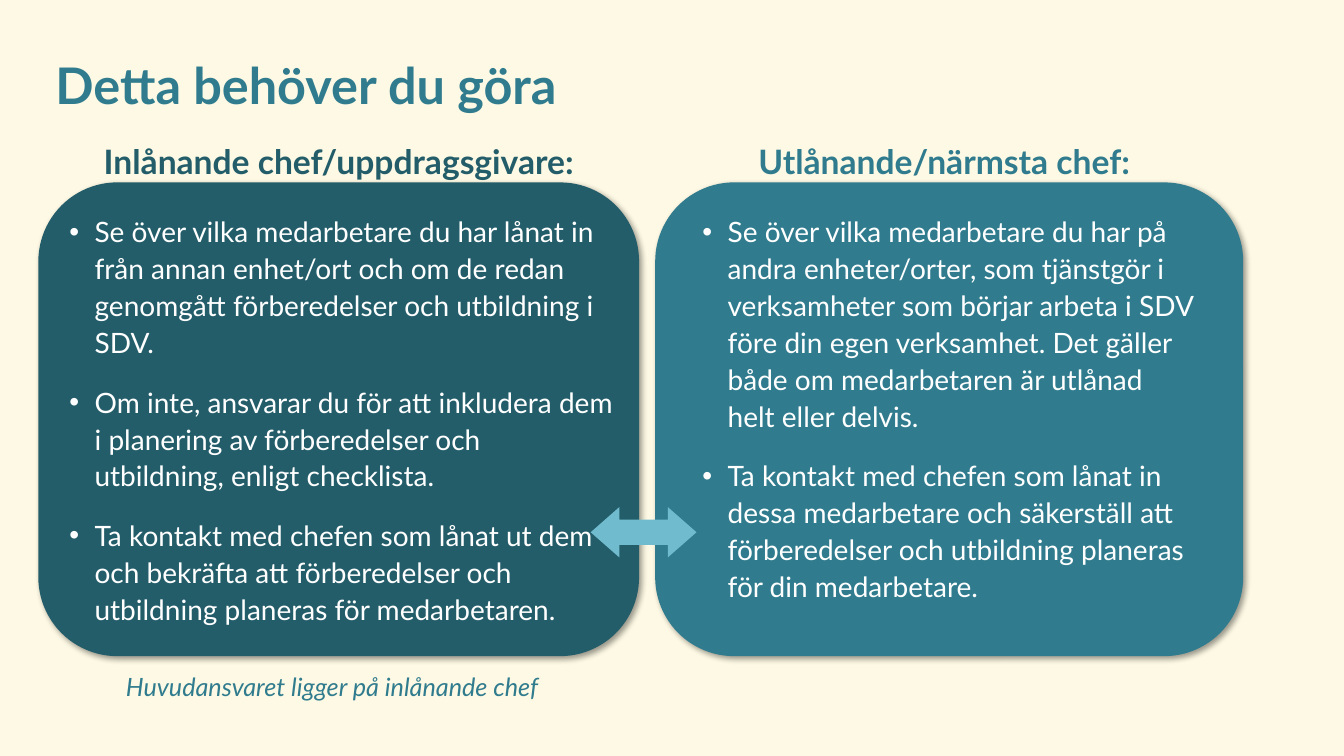
from lxml.etree import SubElement
from pptx import Presentation
from pptx.dml.color import RGBColor
from pptx.enum.shapes import MSO_SHAPE
from pptx.enum.text import MSO_ANCHOR, PP_ALIGN
from pptx.oxml.ns import qn
from pptx.util import Pt

CREAM = RGBColor(0xFD, 0xF9, 0xE4)
TEAL = RGBColor(0x30, 0x7C, 0x8E)
DARK_TEAL = RGBColor(0x24, 0x5D, 0x6A)
LIGHT_TEAL = RGBColor(0x70, 0xBC, 0xCE)
WHITE = RGBColor(0xFF, 0xFF, 0xFF)
FONT = "Lato"

TITLE = "Detta behöver du göra"
FOOTNOTE = "Huvudansvaret ligger på inlånande chef"
PANELS = [
    {
        "heading": "Inlånande chef/uppdragsgivare:",
        "color": DARK_TEAL,
        "left": 27.4, "width": 429.1, "text_left": 42.5, "text_width": 402.5,
        "bullets": [
            "Se över vilka medarbetare du har lånat in från annan enhet/ort och om de redan genomgått förberedelser och utbildning i SDV.",
            "Om inte, ansvarar du för att inkludera dem i planering av förberedelser och utbildning, enligt checklista.",
            "Ta kontakt med chefen som lånat ut dem och bekräfta att förberedelser och utbildning planeras för medarbetaren.",
        ],
    },
    {
        "heading": "Utlånande/närmsta chef:",
        "color": TEAL,
        "left": 468, "width": 420, "text_left": 494.7, "text_width": 367.2,
        "heading_shift": -3.6,
        "bullets": [
            "Se över vilka medarbetare du har på andra enheter/orter, som tjänstgör i verksamheter som börjar arbeta i SDV före din egen verksamhet. Det gäller både om medarbetaren är utlånad helt eller delvis.",
            "Ta kontakt med chefen som lånat in dessa medarbetare och säkerställ att förberedelser och utbildning planeras för din medarbetare.",
        ],
    },
]
HEADING_TOP, HEADING_HEIGHT = 97.2, 36
PANEL_TOP, PANEL_HEIGHT = 130.3, 338.4
TEXT_TOP, TEXT_HEIGHT = 147.6, 310


def place(shape, left, top, width, height):
    shape.left, shape.top = Pt(left), Pt(top)
    shape.width, shape.height = Pt(width), Pt(height)


def add_bullet(para):
    properties = para._p.get_or_add_pPr()
    properties.set("marL", str(Pt(18)))
    properties.set("indent", str(-Pt(18)))
    color = SubElement(properties, qn("a:buClr"))
    SubElement(color, qn("a:srgbClr"), val=str(WHITE))
    SubElement(properties, qn("a:buFont"), typeface="Arial")
    SubElement(properties, qn("a:buChar"), char="•")


def write_text(box, texts, size, color, bold=False, italic=False,
               align=PP_ALIGN.LEFT, line_spacing=None, gap=0, bullets=False):
    frame = box.text_frame
    frame.word_wrap = True
    frame.vertical_anchor = MSO_ANCHOR.TOP
    for index, text in enumerate(texts):
        para = frame.add_paragraph() if index else frame.paragraphs[0]
        if bullets:
            add_bullet(para)
        para.alignment = align
        para.line_spacing = line_spacing
        para.space_before = Pt(gap if index else 0)
        span = para.add_run()
        span.text = text
        span.font.name = FONT
        span.font.size = Pt(size)
        span.font.bold = bold
        span.font.italic = italic
        span.font.color.rgb = color


def add_text(page, bounds, texts, **style):
    box = page.shapes.add_textbox(*map(Pt, bounds))
    write_text(box, texts, **style)


def add_block(page, kind, bounds, color):
    block = page.shapes.add_shape(kind, *map(Pt, bounds))
    block.shadow.inherit = False
    block.fill.solid()
    block.fill.fore_color.rgb = color
    block.line.fill.background()
    return block


def add_soft_shadow(block):
    effects = block._element.spPr.find(qn("a:effectLst"))
    shadow = SubElement(effects, qn("a:outerShdw"), blurRad=str(Pt(4)),
                        dist=str(Pt(3)), dir="2700000", algn="tl", rotWithShape="0")
    color = SubElement(shadow, qn("a:srgbClr"), val="000000")
    SubElement(color, qn("a:alpha"), val="40000")


def add_panel(page, panel):
    left, width = panel["left"], panel["width"]
    heading_left = left + panel.get("heading_shift", 0)
    add_text(page, (heading_left, HEADING_TOP, width, HEADING_HEIGHT), [panel["heading"]],
             size=24, color=panel["color"], bold=True, align=PP_ALIGN.CENTER)
    block = add_block(page, MSO_SHAPE.ROUNDED_RECTANGLE,
                      (left, PANEL_TOP, width, PANEL_HEIGHT), panel["color"])
    add_soft_shadow(block)
    add_text(page, (panel["text_left"], TEXT_TOP, panel["text_width"], TEXT_HEIGHT),
             panel["bullets"], size=20, color=WHITE, line_spacing=1.1, gap=16, bullets=True)


def main():
    deck = Presentation()
    deck.slide_width, deck.slide_height = Pt(960), Pt(540)
    page = deck.slides.add_slide(deck.slide_layouts[5])
    page.background.fill.solid()
    page.background.fill.fore_color.rgb = CREAM

    title = page.shapes.title
    place(title, 32.4, 31, 864, 57.6)
    write_text(title, [TITLE], size=36, color=TEAL, bold=True, line_spacing=1.1)

    for panel in PANELS:
        add_panel(page, panel)
    add_text(page, (36, 475.9, 402.5, 29), [FOOTNOTE], size=18, color=TEAL,
             italic=True, align=PP_ALIGN.CENTER)
    arrow = add_block(page, MSO_SHAPE.LEFT_RIGHT_ARROW, (421.9, 362.2, 75.6, 36), LIGHT_TEAL)
    arrow.adjustments[0] = 0.5
    arrow.adjustments[1] = 0.57
    deck.save("out.pptx")


if __name__ == "__main__":
    main()
